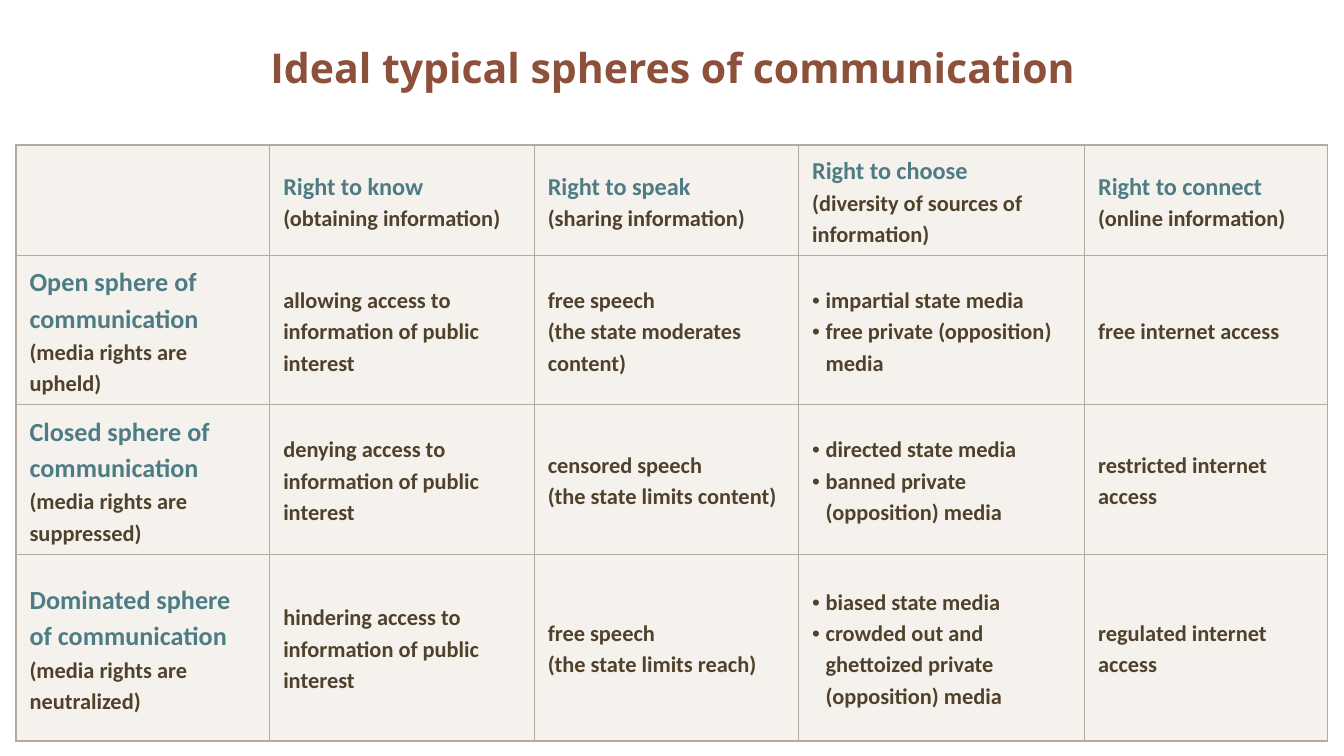
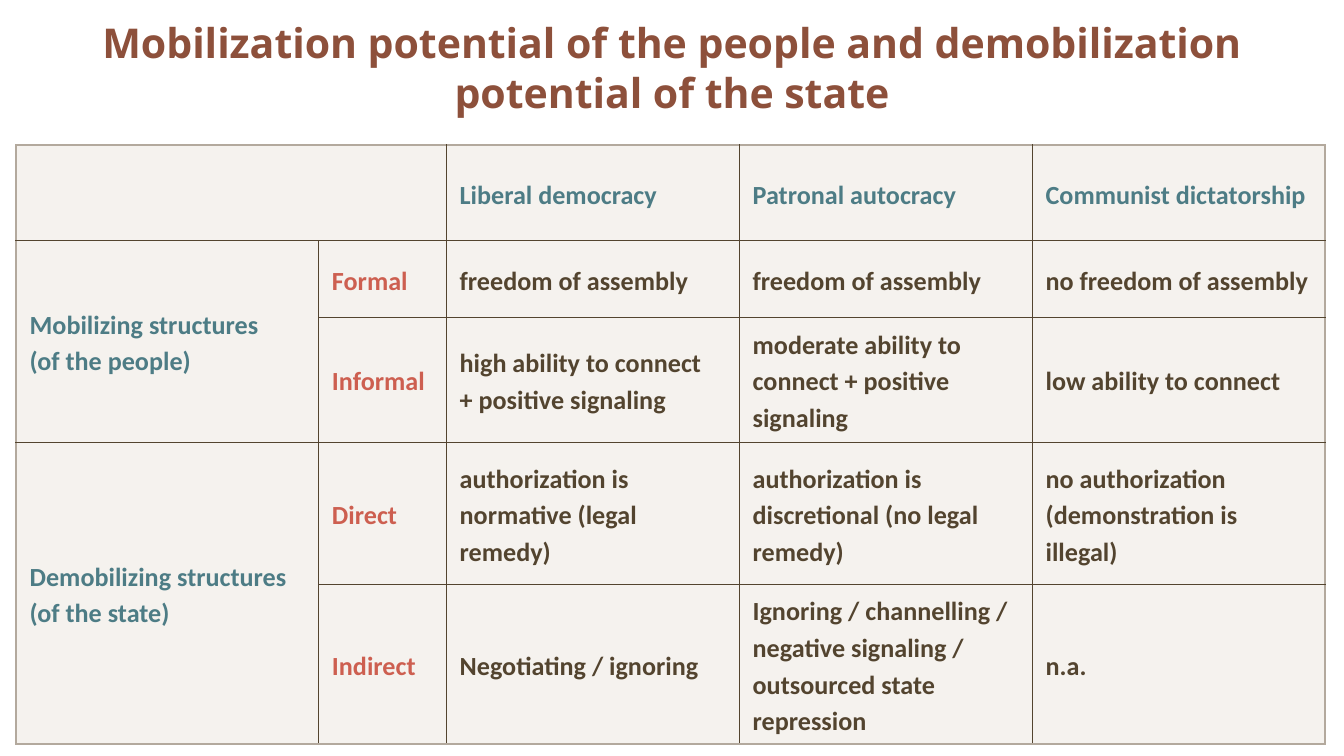
from collections import namedtuple

from lxml.etree import SubElement
from pptx import Presentation
from pptx.dml.color import RGBColor
from pptx.enum.text import MSO_ANCHOR as Anchor, MSO_AUTO_SIZE as AutoSize, PP_ALIGN as Align
from pptx.oxml.ns import qn
from pptx.util import Inches, Pt

Box = namedtuple("Box", "left top width height")
Style = namedtuple("Style", "size color")

SLIDE_WIDTH = 10
SLIDE_HEIGHT = SLIDE_WIDTH * 9 / 16
MARGIN = 0.12
TITLE_HEIGHT = 1
TABLE_TOP = 1.08
BULLET_INDENT = 0.1

RUST, TEAL, CORAL = "8D503B", "4D7C85", "CD5F50"
BROWN, DARK_BROWN = "53442F", "50412B"
SAND, TAUPE = "EFEAE4", "B3A99D"
SAND_OPACITY = 60

RIGHT_NAME = Style(13, TEAL)
SPHERE_NAME = Style(14, TEAL)
DETAIL = Style(12, DARK_BROWN)
REGIME = Style(14, TEAL)
STRUCTURE_KIND = Style(14, CORAL)
FINDING = Style(14, BROWN)

RIGHTS = [
    ("Right to know", "(obtaining information)"),
    ("Right to speak", "(sharing information)"),
    ("Right to choose", "(diversity of sources of information)"),
    ("Right to connect", "(online information)"),
]
SPHERES = [
    ("Open sphere of communication ", "(media rights are upheld)",
     ["allowing access to information of public interest"],
     ["free speech", "(the state moderates content)"],
     ["impartial state media", "free private (opposition) media"],
     ["free internet access"]),
    ("Closed sphere of communication ", "(media rights are suppressed)",
     ["denying access to information of public interest"],
     ["censored speech", "(the state limits content)"],
     ["directed state media", "banned private (opposition) media"],
     ["restricted internet access"]),
    ("Dominated sphere of communication ", "(media rights are neutralized)",
     ["hindering access to information of public interest"],
     ["free speech", "(the state limits reach)"],
     ["biased state media", "crowded out and ghettoized private (opposition) media"],
     ["regulated internet access"]),
]
CHOICE_COLUMN = 3

MOBILIZATION = [
    ("", "", "Liberal democracy", "Patronal autocracy", "Communist dictatorship"),
    ("Mobilizing structures\n(of the people)", "Formal", "freedom of assembly",
     "freedom of assembly", "no freedom of assembly"),
    ("", "Informal", "high ability to connect\n+ positive signaling",
     "moderate ability to connect + positive signaling", "low ability to connect"),
    ("Demobilizing structures\n(of the state)", "Direct",
     "authorization is normative (legal remedy)",
     "authorization is discretional (no legal remedy)",
     "no authorization (demonstration is illegal)"),
    ("", "Indirect", "Negotiating / ignoring",
     "Ignoring / channelling / negative signaling / outsourced state repression", "n.a."),
]


def rgb(color):
    return RGBColor.from_string(color)


def set_font(font, name, style):
    font.name = name
    font.size = Pt(style.size)
    font.bold = True
    font.color.rgb = rgb(style.color)


def add_title(slide, box, text):
    title = slide.shapes.title
    title.left, title.top, title.width, title.height = map(Inches, box)
    frame = title.text_frame
    frame.word_wrap = True
    frame.auto_size = AutoSize.NONE
    frame.vertical_anchor = Anchor.MIDDLE
    heading = frame.paragraphs[0]
    heading.text = text
    heading.alignment = Align.CENTER
    heading.line_spacing = 1.0
    set_font(heading.font, "Open Sans", Style(22, RUST))


def add_bullet(paragraph):
    properties = paragraph._p.get_or_add_pPr()
    properties.set("marL", str(Inches(BULLET_INDENT)))
    properties.set("indent", str(-Inches(BULLET_INDENT)))
    SubElement(properties, qn("a:buFont"), typeface="Arial")
    SubElement(properties, qn("a:buChar"), char="•")


def fill_cell(cell, paragraphs, bulleted=False):
    frame = cell.text_frame
    for index, parts in enumerate(paragraphs):
        paragraph = frame.add_paragraph() if index else frame.paragraphs[0]
        paragraph.line_spacing = 1.15
        if bulleted:
            add_bullet(paragraph)
        if len(parts) == 1:
            text, style = parts[0]
            paragraph.text = text
            set_font(paragraph.font, "Calibri", style)
            continue
        for text, style in parts:
            run = paragraph.add_run()
            run.text = text
            set_font(run.font, "Calibri", style)


def add_border(cell, side, color, width):
    line = SubElement(cell._tc.get_or_add_tcPr(), qn(f"a:ln{side}"), w=str(Pt(width)))
    fill = SubElement(line, qn("a:solidFill"))
    SubElement(fill, qn("a:srgbClr"), val=color)


def style_cells(table, inner):
    row_count, column_count = len(table.rows), len(table.columns)
    for row in range(row_count):
        for column in range(column_count):
            cell = table.cell(row, column)
            cell.vertical_anchor = Anchor.MIDDLE
            on_edge = {
                "L": column == 0,
                "R": column + cell.span_width == column_count,
                "T": row == 0,
                "B": row + cell.span_height == row_count,
            }
            for side, outer in on_edge.items():
                add_border(cell, side, *((TAUPE, 1) if outer else inner))
            cell.fill.solid()
            cell.fill.fore_color.rgb = rgb(SAND)
            shade = cell._tc.tcPr.find(qn("a:solidFill"))
            SubElement(shade[0], qn("a:alpha"), val=str(SAND_OPACITY * 1000))


def add_grid(slide, box, columns, rows, inner, merges=()):
    table = slide.shapes.add_table(len(rows), len(columns), *map(Inches, box)).table
    table.first_row = table.horz_banding = False
    for column, share in zip(table.columns, columns):
        column.width = Inches(box.width * share / sum(columns))
    for row, share in zip(table.rows, rows):
        row.height = Inches(box.height * share / sum(rows))
    for first, last in merges:
        table.cell(*first).merge(table.cell(*last))
    style_cells(table, inner)
    return table


def add_spheres(slide, box):
    table = add_grid(slide, box, (1.89, 1.97, 1.97, 2.13, 1.81),
                     (0.71, 1.02, 1.02, 1.39), (TAUPE, 0.5))
    for column, (right, meaning) in enumerate(RIGHTS, 1):
        fill_cell(table.cell(0, column), [[(right, RIGHT_NAME)], [(meaning, DETAIL)]])
    for row, (sphere, state, *practices) in enumerate(SPHERES, 1):
        fill_cell(table.cell(row, 0), [[(sphere, SPHERE_NAME), (state, DETAIL)]])
        for column, lines in enumerate(practices, 1):
            fill_cell(table.cell(row, column), [[(line, DETAIL)] for line in lines],
                      bulleted=column == CHOICE_COLUMN)


def add_mobilization(slide, box):
    merges = [((0, 0), (0, 1)), ((1, 0), (2, 0)), ((3, 0), (4, 0))]
    table = add_grid(slide, box, (2.25, 0.95, 2.18, 2.18, 2.18),
                     (0.71, 0.57, 0.93, 1.06, 1.06), (BROWN, 0.25), merges)
    for row, texts in enumerate(MOBILIZATION):
        for column, text in enumerate(texts):
            if not text:
                continue
            if row == 0 or column == 0:
                style = REGIME
            else:
                style = STRUCTURE_KIND if column == 1 else FINDING
            fill_cell(table.cell(row, column), [[(text, style)]])


def main():
    deck = Presentation()
    deck.slide_width, deck.slide_height = Inches(SLIDE_WIDTH), Inches(SLIDE_HEIGHT)
    title_only = deck.slide_layouts[5]
    full_width = SLIDE_WIDTH - 2 * MARGIN

    spheres = deck.slides.add_slide(title_only)
    add_title(spheres, Box(1.56, 0, 6.89, TITLE_HEIGHT),
              "Ideal typical spheres of communication")
    add_spheres(spheres, Box(MARGIN, TABLE_TOP, full_width, 4.14))

    mobilization = deck.slides.add_slide(title_only)
    add_title(mobilization, Box(MARGIN, 0, full_width, TITLE_HEIGHT),
              "Mobilization potential of the people and demobilization potential of the state")
    add_mobilization(mobilization, Box(MARGIN, TABLE_TOP, 9.74, 4.33))

    deck.save("out.pptx")


if __name__ == "__main__":
    main()
